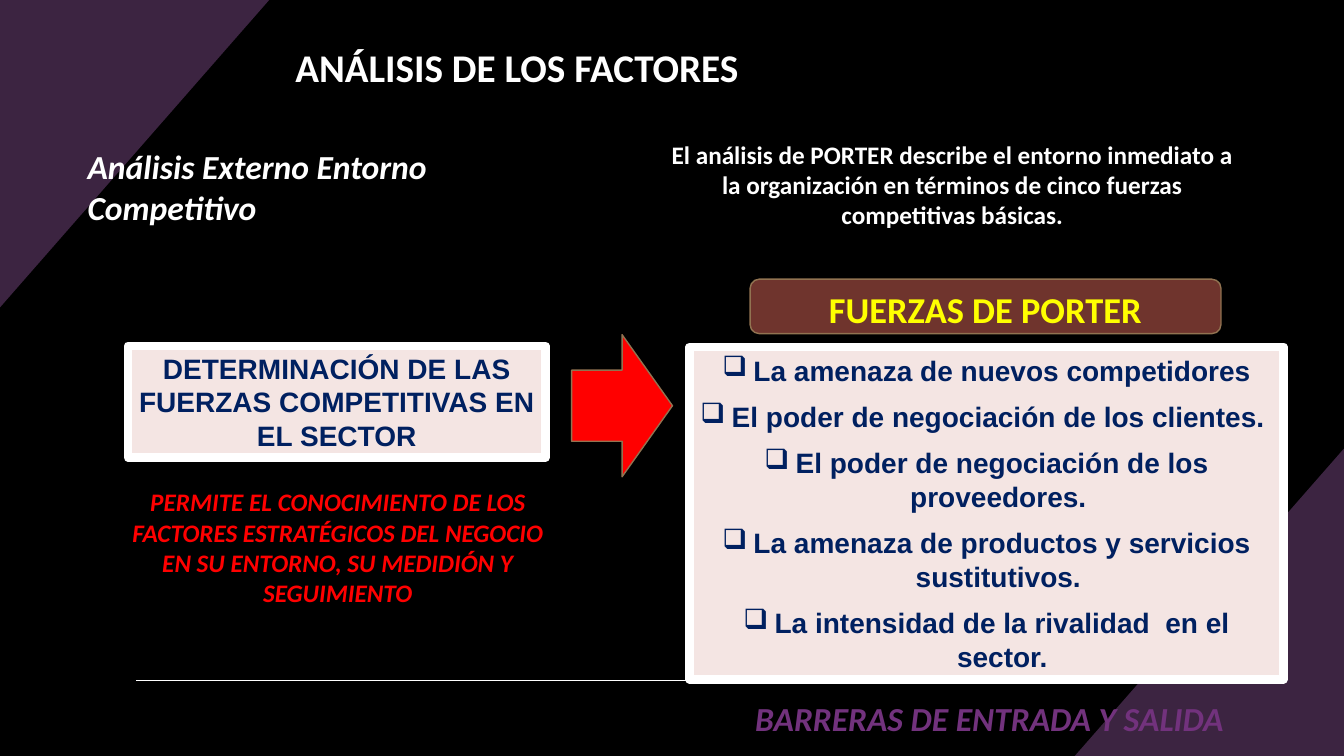
import lxml.etree
import pptx
import pptx.dml.color
import pptx.enum.shapes
import pptx.enum.text
import pptx.oxml.ns
import pptx.util

Inches = pptx.util.Inches
Pt = pptx.util.Pt
Shape = pptx.enum.shapes.MSO_SHAPE
Align = pptx.enum.text.PP_ALIGN
Anchor = pptx.enum.text.MSO_ANCHOR
qn = pptx.oxml.ns.qn

WHITE, RED, NAVY = "FFFFFF", "FF0000", "002060"
PLUM, ROSE, BRONZE = "3C2441", "F4E5E3", "917351"


def rgb(value):
    return pptx.dml.color.RGBColor.from_string(value)


def write(shape, lines, size, color, font="Calibri", italic=False,
          align=Align.CENTER, anchor=Anchor.TOP):
    """Fill a shape with bold paragraphs of one style."""
    frame = shape.text_frame
    frame.word_wrap = True
    frame.vertical_anchor = anchor
    frame.text = "\n".join(lines)
    for para in frame.paragraphs:
        para.alignment = align
        para.font.name = font
        para.font.size = Pt(size)
        para.font.bold = True
        para.font.italic = italic
        para.font.color.rgb = rgb(color)


deck = pptx.Presentation()
deck.slide_width = Inches(13.33)
deck.slide_height = Inches(7.5)
page = deck.slides.add_slide(deck.slide_layouts[5])
page.background.fill.solid()
page.background.fill.fore_color.rgb = rgb("000000")

# Corner triangles
corners = [
    [(13.33, 4.45), (13.33, 7.5), (10.66, 7.5)],
    [(0, 3.05), (0, 0), (2.67, 0)],
]
for corner in corners:
    points = [(Inches(x), Inches(y)) for x, y in corner]
    builder = page.shapes.build_freeform(*points[0])
    builder.add_line_segments(points[1:], close=True)
    triangle = builder.convert_to_shape()
    triangle.shadow.inherit = False
    triangle.fill.solid()
    triangle.fill.fore_color.rgb = rgb(PLUM)
    triangle.line.fill.background()

# Footer rule
rule = page.shapes.add_connector(
    pptx.enum.shapes.MSO_CONNECTOR.STRAIGHT,
    Inches(1.35), Inches(6.75), Inches(12.02), Inches(6.75))
rule.line.color.rgb = rgb(WHITE)
rule.line.width = Pt(1)
lxml.etree.SubElement(rule.element.spPr, qn("a:effectLst"))

# Title
title = page.shapes.title
title.left, title.top = Inches(2.83), Inches(0.38)
title.width, title.height = Inches(5.84), Inches(0.57)
write(title, ["ANÁLISIS DE LOS FACTORES"], 28, WHITE, align=Align.LEFT)

# Filled shapes: kind, position and size, fill, line colour, line width
blocks = [
    (Shape.ROUNDED_RECTANGLE, (7.44, 2.77, 4.67, 0.54), "6F342D", BRONZE, 1),
    (Shape.RECTANGLE, (1.27, 3.43, 4.14, 1.11), ROSE, WHITE, 6),
    (Shape.RECTANGLE, (6.84, 3.44, 5.89, 3.3), ROSE, WHITE, 6),
    (Shape.RIGHT_ARROW, (5.67, 3.32, 1, 1.41), RED, BRONZE, 1),
]
shapes = []
for kind, place, fill, line, width in blocks:
    shape = page.shapes.add_shape(kind, *map(Inches, place))
    shape.shadow.inherit = False
    shape.fill.solid()
    shape.fill.fore_color.rgb = rgb(fill)
    shape.line.color.rgb = rgb(line)
    shape.line.width = Pt(width)
    shapes.append(shape)
banner, sector_box, forces_box, arrow = shapes

write(sector_box, ["DETERMINACIÓN DE LAS FUERZAS COMPETITIVAS EN EL SECTOR"],
      20, NAVY, font="Arial", anchor=Anchor.MIDDLE)

forces = [
    "La amenaza de nuevos competidores",
    "El poder de negociación de los clientes. ",
    "El poder de negociación de los proveedores. ",
    "La amenaza de productos y servicios sustitutivos. ",
    "La intensidad de la rivalidad  en el sector.",
]
write(forces_box, forces, 20, NAVY, font="Arial", anchor=Anchor.MIDDLE)
for para in forces_box.text_frame.paragraphs:
    para.space_before = Pt(9)
    props = para._p.get_or_add_pPr()
    props.set("marL", str(Inches(0.31)))
    props.set("indent", str(Inches(-0.31)))
    bullet = lxml.etree.Element(qn("a:buChar"), char="❑")
    props.find(qn("a:spcBef")).addnext(bullet)

# Free text: position and size, text, points, colour, italic, alignment
notes = [
    ((6.49, 1.33, 5.91, 1.01),
     "El análisis de PORTER describe el entorno inmediato a la organización "
     "en términos de cinco fuerzas competitivas básicas.",
     18, WHITE, False, Align.CENTER),
    ((7.36, 2.8, 4.83, 0.54), "FUERZAS DE PORTER",
     26, "FFFF00", False, Align.CENTER),
    ((0.77, 1.4, 3.79, 0.91), "Análisis Externo Entorno Competitivo",
     24, WHITE, True, Align.LEFT),
    ((1.08, 4.78, 4.54, 1.31),
     "PERMITE EL CONOCIMIENTO DE LOS FACTORES ESTRATÉGICOS DEL NEGOCIO "
     "EN SU ENTORNO, SU MEDIDIÓN Y SEGUIMIENTO",
     18, RED, True, Align.CENTER),
    ((6.65, 6.87, 6.33, 0.5), "BARRERAS DE ENTRADA Y SALIDA",
     24, "72327D", True, Align.CENTER),
]
for place, text, size, color, italic, align in notes:
    box = page.shapes.add_textbox(*map(Inches, place))
    write(box, [text], size, color, italic=italic, align=align)

deck.save("out.pptx")
